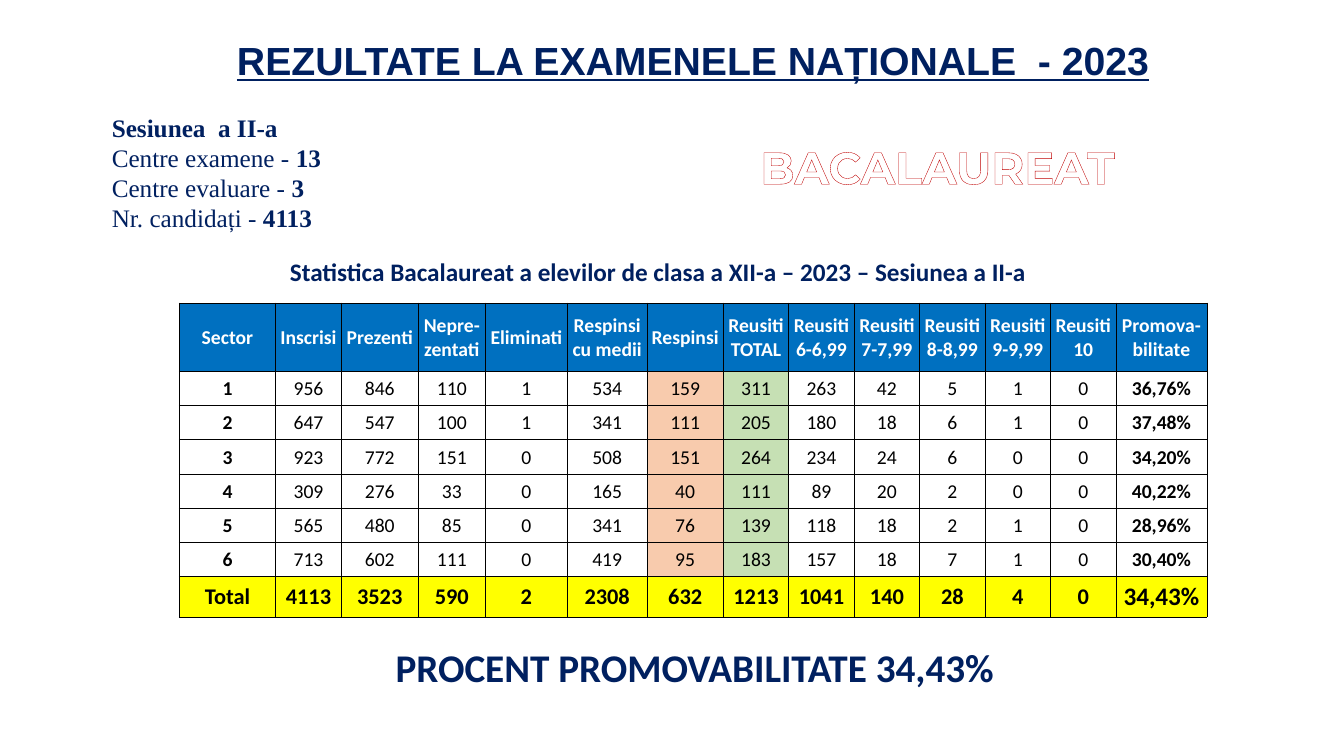
from lxml.etree import SubElement
from pptx import Presentation
from pptx.dml.color import RGBColor
from pptx.enum.text import MSO_ANCHOR, MSO_AUTO_SIZE, PP_ALIGN
from pptx.oxml import parse_xml
from pptx.oxml.ns import qn
from pptx.util import Pt

HUE = {
    "navy": "002060", "blue": "0070C0", "red": "C00000", "white": "FFFFFF",
    "black": "000000", "peach": "F8CBAD", "green": "C6E0B4", "yellow": "FFFF00",
}
NS = "http://schemas.openxmlformats.org/drawingml/2006/main"
WIDTHS = [69, 46.75, 55, 48, 58.5, 57, 54.5] + [46.75] * 6 + [65]
HEADS = [
    "Sector", "Inscrisi", "Prezenti", "Nepre-\nzentati", "Eliminati",
    "Respinsi\ncu medii", "Respinsi", "Reusiti\nTOTAL", "Reusiti\n6-6,99",
    "Reusiti\n7-7,99", "Reusiti\n8-8,99", "Reusiti\n9-9,99", "Reusiti\n10",
    "Promova-\nbilitate",
]
ROWS = [
    "1 956 846 110 1 534 159 311 263 42 5 1 0 36,76%",
    "2 647 547 100 1 341 111 205 180 18 6 1 0 37,48%",
    "3 923 772 151 0 508 151 264 234 24 6 0 0 34,20%",
    "4 309 276 33 0 165 40 111 89 20 2 0 0 40,22%",
    "5 565 480 85 0 341 76 139 118 18 2 1 0 28,96%",
    "6 713 602 111 0 419 95 183 157 18 7 1 0 30,40%",
]
TOTAL = "Total 4113 3523 590 2 2308 632 1213 1041 140 28 4 0 34,43%"


def stroke(tag, hue, width):
    return parse_xml(
        f'<a:{tag} xmlns:a="{NS}" w="{int(Pt(width))}"><a:solidFill>'
        f'<a:srgbClr val="{HUE[hue]}"/></a:solidFill></a:{tag}>')


def write(para, text, size=14, face="Calibri", hue="navy", bold=True,
          under=None, edge=None, align=None):
    """Append text to a paragraph; a newline becomes a line break."""
    if align is not None:
        para.alignment = align
    for i, part in enumerate(text.split("\n")):
        if i:
            para.add_line_break()
        run = para.add_run()
        run.text = part
        font = run.font
        font.size, font.name = Pt(size), face
        font.bold, font.underline = bold, under
        font.color.rgb = RGBColor.from_string(HUE[hue])
        if edge:
            run._r.get_or_add_rPr().insert(0, stroke("ln", *edge))


def place(shape, box):
    shape.left, shape.top, shape.width, shape.height = map(Pt, box)
    frame = shape.text_frame
    frame.word_wrap = True
    frame.auto_size = MSO_AUTO_SIZE.SHAPE_TO_FIT_TEXT
    frame.vertical_anchor = MSO_ANCHOR.TOP
    return frame


def label(slide, box, text, **form):
    frame = place(slide.shapes.add_textbox(0, 0, 0, 0), box)
    write(frame.paragraphs[0], text, **form)


def title(slide, box):
    frame = place(slide.shapes.title, box)
    write(frame.paragraphs[0], "REZULTATE LA EXAMENELE NAȚIONALE  - 2023",
          size=28, face="Arial", under=True, edge=("blue", 0.75),
          align=PP_ALIGN.CENTER)


def session(slide, box):
    frame = place(slide.shapes.add_textbox(0, 0, 0, 0), box)
    form = {"size": 18, "face": "Times New Roman"}
    write(frame.paragraphs[0], "Sesiunea  a II-a", **form)
    facts = {"Centre examene": "13", "Centre evaluare": "3", "Nr. candidați": "4113"}
    for name, count in facts.items():
        para = frame.add_paragraph()
        write(para, f"{name} - ", bold=False, **form)
        write(para, count, **form)


def fill_cell(cell, text, fill=None, **form):
    cell.margin_left = cell.margin_right = cell.margin_top = Pt(0.7)
    cell.margin_bottom = 0
    cell.vertical_anchor = MSO_ANCHOR.MIDDLE
    if fill:
        cell.fill.solid()
        cell.fill.fore_color.rgb = RGBColor.from_string(HUE[fill])
    else:
        cell.fill.background()
    props = cell._tc.get_or_add_tcPr()
    for i, side in enumerate("LRTB"):
        props.insert(i, stroke("ln" + side, "black", 0.5))
    write(cell.text_frame.paragraphs[0], text, align=PP_ALIGN.CENTER, **form)


def results(slide, box):
    rows = [HEADS] + [row.split() for row in ROWS + [TOTAL]]
    end, last = len(rows) - 1, len(HEADS) - 1
    table = slide.shapes.add_table(len(rows), len(HEADS), *map(Pt, box)).table
    for col, width in zip(table.columns, WIDTHS):
        col.width = Pt(width)
    for r, row in enumerate(rows):
        table.rows[r].height = Pt(49 if r == 0 else 29 if r == end else 24.4)
        for c, text in enumerate(row):
            cell = table.cell(r, c)
            if r == 0:
                fill_cell(cell, text, "blue", hue="white")
            elif r == end:
                fill_cell(cell, text, "yellow", hue="black",
                          size=18 if c == last else 16)
            else:
                fill_cell(cell, text, {6: "peach", 7: "green"}.get(c),
                          hue="black", bold=c in (0, last))


def main():
    deck = Presentation()
    deck.slide_width, deck.slide_height = Pt(960), Pt(540)
    slide = deck.slides.add_slide(deck.slide_layouts[5])
    # Heading and session facts
    title(slide, (70, 22.4, 850, 41))
    session(slide, (72.8, 76.5, 225, 94))
    # Table with its caption
    label(slide, (200, 179.5, 544, 29),
          "Statistica Bacalaureat a elevilor de clasa a XII-a – 2023 – Sesiunea a II-a",
          size=18)
    results(slide, (128, 216.4, sum(WIDTHS), 224.4))
    # Overall rate and exam name
    label(slide, (275.5, 456, 570, 41), "PROCENT PROMOVABILITATE 34,43%", size=28)
    label(slide, (536, 96, 309, 46), "BACALAUREAT", size=32, face="Montserrat",
          hue="white", edge=("red", 2.25))
    deck.save("out.pptx")


if __name__ == "__main__":
    main()
